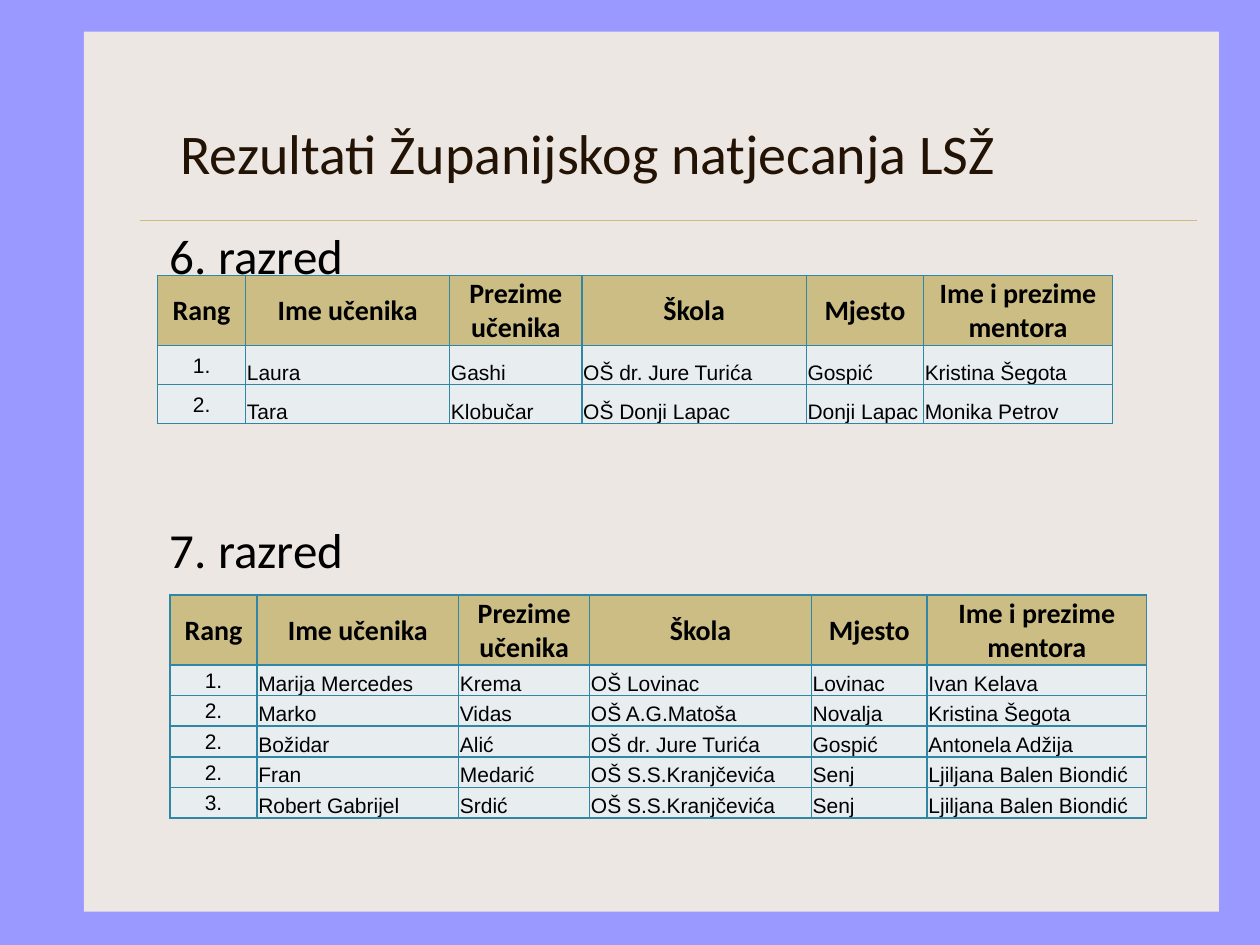
import pptx
import pptx.dml.color
import pptx.enum.shapes
import pptx.enum.text
import pptx.oxml
import pptx.oxml.ns
import pptx.util
from lxml import etree

Pt = pptx.util.Pt
ALIGN = pptx.enum.text.PP_ALIGN
ANCHOR = pptx.enum.text.MSO_ANCHOR

TITLE_FONT = {"name": "Calibri", "size": Pt(32), "color": "221304"}
GRADE_FONT = {"name": "Calibri", "size": Pt(28), "color": "000000"}
HEADER_FONT = {"name": "Calibri", "size": Pt(16), "bold": True, "color": "000000"}
ENTRY_FONT = {"name": "Arial", "size": Pt(12), "bold": False, "color": "000000"}
CELL_MARGINS = {
    "margin_left": Pt(0.72),
    "margin_top": Pt(0.72),
    "margin_right": Pt(0.72),
    "margin_bottom": 0,
}

HEADERS = ["Rang", "Ime učenika", "Prezime učenika", "Škola", "Mjesto", "Ime i prezime mentora"]
SIXTH_GRADE = [
    ["1.", "Laura", "Gashi", "OŠ dr. Jure Turića", "Gospić", "Kristina Šegota"],
    ["2.", "Tara", "Klobučar", "OŠ Donji Lapac", "Donji Lapac", "Monika Petrov"],
]
SEVENTH_GRADE = [
    ["1.", "Marija Mercedes", "Krema", "OŠ Lovinac", "Lovinac", "Ivan Kelava"],
    ["2.", "Marko", "Vidas", "OŠ A.G.Matoša", "Novalja", "Kristina Šegota"],
    ["2.", "Božidar", "Alić", "OŠ dr. Jure Turića", "Gospić", "Antonela Adžija"],
    ["2.", "Fran", "Medarić", "OŠ S.S.Kranjčevića", "Senj", "Ljiljana Balen Biondić"],
    ["3.", "Robert Gabrijel", "Srdić", "OŠ S.S.Kranjčevića", "Senj", "Ljiljana Balen Biondić"],
]


def set_color(target, color):
    """Apply a hex colour to a font, fill or line colour."""
    target.rgb = pptx.dml.color.RGBColor.from_string(color)


def set_fill(fill, color):
    """Make a fill solid in a hex colour."""
    fill.solid()
    set_color(fill.fore_color, color)


def set_font(paragraph, formats):
    """Apply font format values to every run of a paragraph."""
    for run in paragraph.runs:
        for name, value in formats.items():
            if name == "color":
                set_color(run.font.color, value)
            else:
                setattr(run.font, name, value)


def add_panel(slide, left, top, width, height, color):
    """Add a plain filled rectangle."""
    shape = slide.shapes.add_shape(
        pptx.enum.shapes.MSO_SHAPE.RECTANGLE, Pt(left), Pt(top), Pt(width), Pt(height)
    )
    shape.shadow.inherit = False
    set_fill(shape.fill, color)
    shape.line.fill.background()


def add_rule(slide, left, right, top, color):
    """Add a thin horizontal line."""
    connector = slide.shapes.add_connector(
        pptx.enum.shapes.MSO_CONNECTOR.STRAIGHT, Pt(left), Pt(top), Pt(right), Pt(top)
    )
    set_color(connector.line.color, color)
    connector.line.width = Pt(0.25)
    etree.SubElement(
        connector.element.find(pptx.oxml.ns.qn("p:spPr")), pptx.oxml.ns.qn("a:effectLst")
    )


def add_text(slide, left, top, width, height, lines, formats, anchor=ANCHOR.TOP, gap=0):
    """Add a text box whose paragraphs are separated by a gap."""
    frame = slide.shapes.add_textbox(Pt(left), Pt(top), Pt(width), Pt(height)).text_frame
    frame.word_wrap = True
    frame.vertical_anchor = anchor
    frame.text = "\n".join(lines)
    for index, paragraph in enumerate(frame.paragraphs):
        set_font(paragraph, formats)
        if index:
            paragraph.space_before = Pt(gap)


def set_borders(cell, color, width):
    """Draw all four borders of a cell ahead of its fill."""
    properties = cell._tc.get_or_add_tcPr()
    for index, side in enumerate(("lnL", "lnR", "lnT", "lnB")):
        border = pptx.oxml.parse_xml(
            f'<a:{side} {pptx.oxml.ns.nsdecls("a")} w="{Pt(width)}"><a:solidFill>'
            f'<a:srgbClr val="{color}"/></a:solidFill></a:{side}>'
        )
        properties.insert(index, border)


def fill_cell(cell, text, is_header, is_rank):
    """Write and format one table cell."""
    centred = is_header or is_rank
    cell.text = text
    cell.vertical_anchor = ANCHOR.MIDDLE if centred else ANCHOR.BOTTOM
    for name, value in CELL_MARGINS.items():
        setattr(cell, name, value)
    paragraph = cell.text_frame.paragraphs[0]
    paragraph.alignment = ALIGN.CENTER if centred else ALIGN.LEFT
    set_font(paragraph, HEADER_FONT if is_header else ENTRY_FONT)
    set_fill(cell.fill, "CBBD83" if is_header else "E8EDF0")
    set_borders(cell, "3086A5", 1)


def add_results(slide, left, top, widths, row_height, entries):
    """Add a results table with a header row."""
    rows = [HEADERS] + entries
    heights = [40] + [row_height] * len(entries)
    table = slide.shapes.add_table(
        len(rows), len(widths), Pt(left), Pt(top), Pt(sum(widths)), Pt(sum(heights))
    ).table
    for column, width in zip(table.columns, widths):
        column.width = Pt(width)
    for row_index, (row, height) in enumerate(zip(rows, heights)):
        table.rows[row_index].height = Pt(height)
        for column_index, text in enumerate(row):
            cell = table.cell(row_index, column_index)
            fill_cell(cell, text, row_index == 0, column_index == 0)


def main():
    """Build the slide and save it."""
    presentation = pptx.Presentation()
    presentation.slide_width = Pt(720)
    presentation.slide_height = Pt(540)
    slide = presentation.slides.add_slide(presentation.slide_layouts[6])
    set_fill(slide.background.fill, "9999FF")
    add_panel(slide, 48, 18, 648.5, 503, "EDE7E3")
    add_rule(slide, 80, 684, 126, "CBBD83")
    add_text(slide, 90, 125.5, 600, 344, ["6. razred", "7. razred"], GRADE_FONT, gap=134)
    add_text(slide, 96, 42, 600, 90, ["Rezultati Županijskog natjecanja LSŽ"],
             TITLE_FONT, ANCHOR.MIDDLE)
    add_results(slide, 90, 157.5, [50.4, 116.6, 75.6, 128.2, 67, 108], 22.3, SIXTH_GRADE)
    add_results(slide, 97.2, 340, [49.7, 115.2, 74.9, 126.7, 66.2, 125.3], 17.5, SEVENTH_GRADE)
    presentation.save("out.pptx")


if __name__ == "__main__":
    main()
